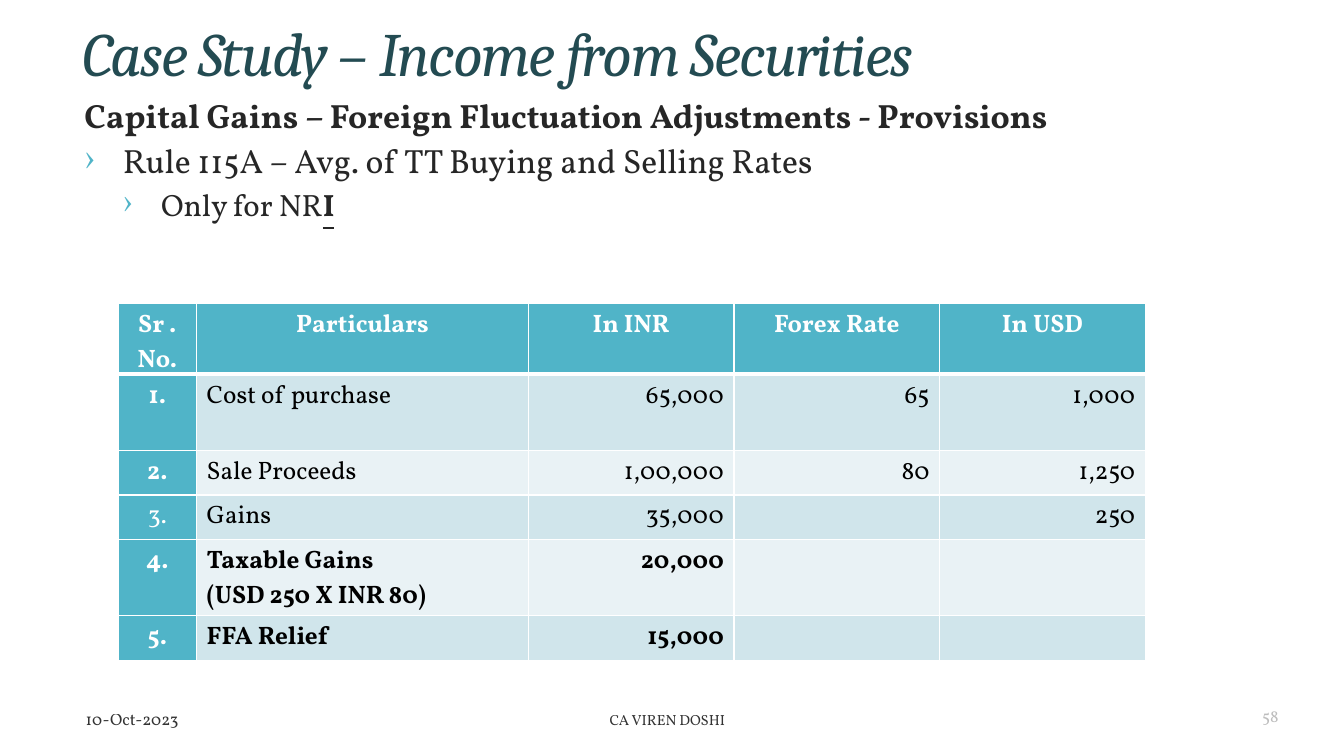
"""Build the case study slide on capital gains and foreign fluctuation relief."""
from dataclasses import dataclass

import pptx
import pptx.dml.color
import pptx.enum.text
import pptx.oxml
import pptx.oxml.ns
import pptx.util

ALIGN = pptx.enum.text.PP_ALIGN
ANCHOR = pptx.enum.text.MSO_ANCHOR
WIDTH, HEIGHT = pptx.util.Inches(13.33), pptx.util.Inches(7.5)
TEXT_FONT, TITLE_FONT = "Vollkorn", "Cambria"
TEAL, WHITE, BLACK, INK = "50B4C8", "FFFFFF", "000000", "262626"
BANDS = ("D0E5EB", "E9F2F5")
INDENT = 0.38


@dataclass(frozen=True)
class Box:
    """Place on the slide, in percent of its width and height."""
    left: float
    top: float
    width: float
    height: float

    def lengths(self) -> tuple[int, int, int, int]:
        """Return left, top, width and height as lengths."""
        return across(self.left), down(self.top), across(self.width), down(self.height)


@dataclass(frozen=True)
class Point:
    """Body line made of runs, with its bullet depth and size."""
    runs: tuple[str, ...]
    depth: int
    size: float


@dataclass(frozen=True)
class Footer:
    """Small text at the foot of the slide."""
    text: str
    box: Box
    size: float
    align: ALIGN
    anchor: ANCHOR
    opacity: int


@dataclass(frozen=True)
class Row:
    """Table row with its height and the weight of its label and values."""
    values: tuple[str, ...]
    height: float
    bold_label: bool = True
    bold_values: bool = False


TITLE_BOX = Box(5.4, 0.27, 88.37, 14.8)
BODY_BOX = Box(5.55, 12.67, 88.22, 78.53)
TABLE_BOX = Box(8.78, 40.13, 76.43, 43.73)
COLUMNS = (5.85, 24.68, 15.3, 15.3, 15.3)
SINGLE, DOUBLE = 5.87, 10.13
POINTS = (
    Point(("Capital Gains – Foreign Fluctuation Adjustments - Provisions",), 0, 24),
    Point(("Rule 115A – Avg. of TT Buying and Selling Rates",), 1, 24),
    Point(("Only for NR", "I"), 2, 22),
)
ROWS = (
    Row(("Sr . No.", "Particulars", "In INR", "Forex Rate", "In USD"), SINGLE, True, True),
    Row(("1.", "Cost of purchase", "65,000", "65", "1,000"), DOUBLE),
    Row(("2.", "Sale Proceeds", "1,00,000", "80", "1,250"), SINGLE),
    Row(("3.", "Gains", "35,000", "", "250"), SINGLE, False),
    Row(("4.", "Taxable Gains\n(USD 250 X INR 80)", "20,000", "", ""), DOUBLE, True, True),
    Row(("5.", "FFA Relief", "15,000", "", ""), SINGLE, True, True),
)
FOOTERS = (
    Footer("10-Oct-2023", Box(5.63, 93.47, 33.76, 3.33), 12, ALIGN.LEFT, ANCHOR.MIDDLE, 80),
    Footer("CA VIREN DOSHI", Box(29.03, 93.47, 41.26, 3.33), 10.5, ALIGN.CENTER, ANCHOR.MIDDLE, 80),
    Footer("58", Box(72.77, 93.47, 23.11, 3.2), 12, ALIGN.RIGHT, ANCHOR.BOTTOM, 25),
)


def across(share: float) -> int:
    """Return a percentage of the slide's width."""
    return round(WIDTH * share / 100)


def down(share: float) -> int:
    """Return a percentage of the slide's height."""
    return round(HEIGHT * share / 100)


def color(value: str) -> pptx.dml.color.RGBColor:
    """Return the colour of a hex string."""
    return pptx.dml.color.RGBColor.from_string(value)


def add_element(parent, markup: str) -> None:
    """Append a drawing element given as markup."""
    namespace = pptx.oxml.ns.nsdecls("a")
    parent.append(pptx.oxml.parse_xml(markup.replace(">", f" {namespace}>", 1)))


def format_run(run, size: float, value: str, bold: bool = False, name: str = TEXT_FONT) -> None:
    """Set the font of a run."""
    run.font.name, run.font.size, run.font.bold = name, pptx.util.Pt(size), bold
    run.font.color.rgb = color(value)


def add_title(slide) -> None:
    """Move and format the title placeholder."""
    shape = slide.shapes.title
    shape.left, shape.top, shape.width, shape.height = TITLE_BOX.lengths()
    frame = shape.text_frame
    frame.text = "Case Study – Income from Securities"
    frame.auto_size = pptx.enum.text.MSO_AUTO_SIZE.NONE
    frame.vertical_anchor = ANCHOR.MIDDLE
    paragraph = frame.paragraphs[0]
    paragraph.alignment, paragraph.line_spacing = ALIGN.LEFT, 0.85
    run = paragraph.runs[0]
    format_run(run, 44, "234B52", name=TITLE_FONT)
    run.font.italic = True
    run.font._element.set("spc", "-120")


def add_frame(slide, box: Box):
    """Add a wrapping text box and return its text frame."""
    frame = slide.shapes.add_textbox(*box.lengths()).text_frame
    frame.word_wrap = True
    return frame


def add_bullet(paragraph, depth: int) -> None:
    """Give a paragraph a hanging teal bullet."""
    properties = paragraph._p.get_or_add_pPr()
    step = pptx.util.Inches(INDENT)
    properties.set("marL", str(step * depth))
    properties.set("indent", str(-step))
    add_element(properties, f'<a:buClr><a:srgbClr val="{TEAL}"/></a:buClr>')
    add_element(properties, '<a:buChar char="›"></a:buChar>')


def add_points(slide) -> None:
    """Add the heading and its bulleted points."""
    frame = add_frame(slide, BODY_BOX)
    frame.text = "\n".join(point.runs[0] for point in POINTS)
    for paragraph, point in zip(frame.paragraphs, POINTS):
        paragraph.line_spacing = 0.85
        paragraph.space_before, paragraph.space_after = pptx.util.Pt(5), pptx.util.Pt(3)
        if point.depth:
            paragraph.level = point.depth - 1
            add_bullet(paragraph, point.depth)
        format_run(paragraph.runs[0], point.size, INK, point.depth == 0)
        for text in point.runs[1:]:
            run = paragraph.add_run()
            run.text = text
            format_run(run, point.size, INK, True)
            run.font.underline = True


def add_footer(slide, footer: Footer) -> None:
    """Add one footer text."""
    frame = add_frame(slide, footer.box)
    frame.text = footer.text
    frame.vertical_anchor = footer.anchor
    paragraph = frame.paragraphs[0]
    paragraph.alignment = footer.align
    run = paragraph.runs[0]
    format_run(run, footer.size, BLACK)
    shade = run.font._element.find(".//" + pptx.oxml.ns.qn("a:srgbClr"))
    add_element(shade, f'<a:alpha val="{footer.opacity * 1000}"></a:alpha>')


def fill_cell(cell, row: Row, row_index: int, column_index: int) -> None:
    """Write, border and fill one table cell."""
    header, label = row_index == 0, column_index == 0
    for side in "LRTB":
        thick = (header and side == "B") or (row_index == 1 and side == "T")
        width = pptx.util.Pt(3 if thick else 1)
        add_element(cell._tc.get_or_add_tcPr(), f'<a:ln{side} w="{width}"><a:solidFill>'
                    f'<a:srgbClr val="{WHITE}"/></a:solidFill></a:ln{side}>')
    cell.fill.solid()
    cell.fill.fore_color.rgb = color(TEAL if header or label else BANDS[(row_index - 1) % 2])
    cell.text_frame.text = row.values[column_index]
    for paragraph in cell.text_frame.paragraphs:
        paragraph.alignment = (ALIGN.CENTER if header or label
                               else ALIGN.LEFT if column_index == 1 else ALIGN.RIGHT)
        paragraph.font.size = pptx.util.Pt(18)
        for run in paragraph.runs:
            format_run(run, 18, WHITE if header or label else BLACK,
                       row.bold_label if label else row.bold_values)


def add_gains_table(slide) -> None:
    """Add the table of gains and relief."""
    table = slide.shapes.add_table(len(ROWS), len(COLUMNS), *TABLE_BOX.lengths()).table
    table.first_col = True
    for column, share in zip(table.columns, COLUMNS):
        column.width = across(share)
    for row_index, row in enumerate(ROWS):
        table.rows[row_index].height = down(row.height)
        for column_index in range(len(COLUMNS)):
            fill_cell(table.cell(row_index, column_index), row, row_index, column_index)


def main() -> None:
    """Build and save the presentation."""
    presentation = pptx.Presentation()
    presentation.slide_width, presentation.slide_height = WIDTH, HEIGHT
    slide = presentation.slides.add_slide(presentation.slide_layouts.get_by_name("Title Only"))
    add_title(slide)
    add_points(slide)
    for footer in FOOTERS:
        add_footer(slide, footer)
    add_gains_table(slide)
    presentation.save("out.pptx")


if __name__ == "__main__":
    main()
